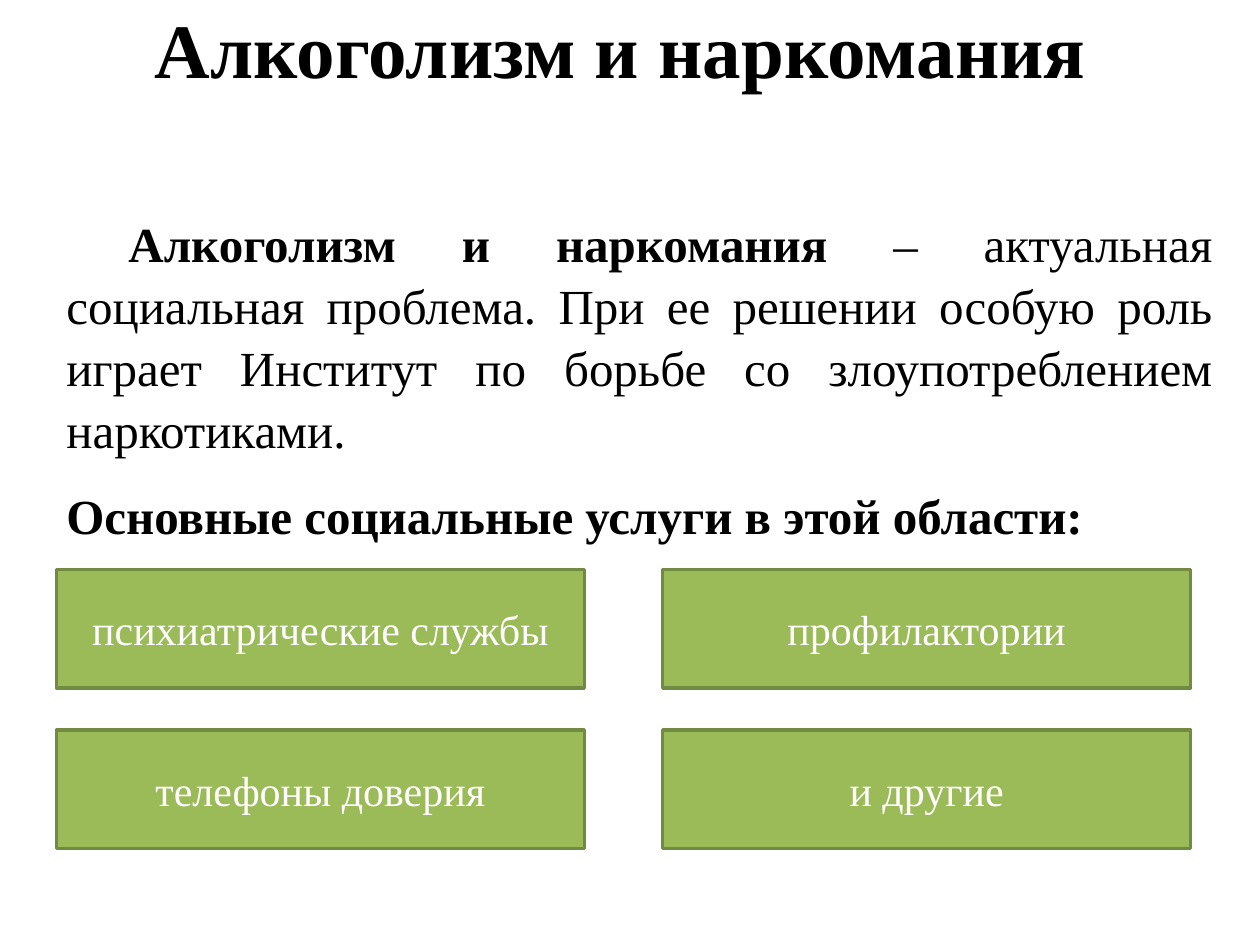
from dataclasses import dataclass

from pptx import Presentation
from pptx import util as u
from pptx.dml.color import RGBColor
from pptx.enum import shapes, text


@dataclass(frozen=True)
class Theme:
    font: str = "Times New Roman"
    ink: RGBColor = RGBColor(0x00, 0x00, 0x00)
    card_text: RGBColor = RGBColor(0xFF, 0xFF, 0xFF)
    card_fill: RGBColor = RGBColor(0x9B, 0xBB, 0x59)
    card_line: RGBColor = RGBColor(0x73, 0x8A, 0x42)
    title_size: int = 44
    body_size: int = 28
    card_size: int = 24
    card_line_width: int = 2
    body_spacing: float = 1.05


THEME = Theme()
SERVICES = [
    ["психиатрические службы", "профилактории"],
    ["телефоны доверия", "и другие"],
]


def style_run(run, size, color, bold=False):
    run.font.name = THEME.font
    run.font.size = u.Pt(size)
    run.font.color.rgb = color
    run.font.bold = bold


def place_title(slide, left, top, width, height):
    title = slide.shapes.title
    title.left, title.top = u.Cm(left), u.Cm(top)
    title.width, title.height = u.Cm(width), u.Cm(height)
    frame = title.text_frame
    frame.text = "Алкоголизм и наркомания "
    frame.auto_size = text.MSO_AUTO_SIZE.NONE
    frame.vertical_anchor = text.MSO_ANCHOR.MIDDLE
    heading = frame.paragraphs[0]
    heading.alignment = text.PP_ALIGN.CENTER
    style_run(heading.runs[0], THEME.title_size, THEME.ink, bold=True)


def add_statement(slide, left, top, width, height, parts):
    """Add a one-paragraph text box; parts holds (wording, bold) pairs."""
    statement = slide.shapes.add_textbox(
        u.Cm(left), u.Cm(top), u.Cm(width), u.Cm(height))
    frame = statement.text_frame
    frame.word_wrap = True
    frame.auto_size = text.MSO_AUTO_SIZE.SHAPE_TO_FIT_TEXT
    paragraph = frame.paragraphs[0]
    paragraph.line_spacing = THEME.body_spacing
    for wording, bold in parts:
        run = paragraph.add_run()
        run.text = wording
        style_run(run, THEME.body_size, THEME.ink, bold)
    return paragraph


def add_introduction(slide, left, top, width, height):
    # Definition, justified with an indented first line
    definition = add_statement(slide, left, top, width, 5.05, [
        ("Алкоголизм и наркомания", True),
        (" – актуальная социальная проблема. При ее решении особую роль "
         "играет Институт по борьбе со злоупотреблением наркотиками.", False),
    ])
    definition.alignment = text.PP_ALIGN.JUSTIFY
    definition._p.get_or_add_pPr().set("indent", str(u.Cm(1.25)))

    # Lead-in to the services, at the foot of the region
    lead_height = 1.45
    add_statement(slide, left, top + height - lead_height, width, lead_height,
                  [("Основные социальные услуги в этой области:", True)])


def add_service(slide, left, top, width, height, name):
    card = slide.shapes.add_shape(
        shapes.MSO_SHAPE.RECTANGLE,
        u.Cm(left), u.Cm(top), u.Cm(width), u.Cm(height))
    card.shadow.inherit = False
    card.fill.solid()
    card.fill.fore_color.rgb = THEME.card_fill
    card.line.color.rgb = THEME.card_line
    card.line.width = u.Pt(THEME.card_line_width)
    frame = card.text_frame
    frame.text = name
    frame.vertical_anchor = text.MSO_ANCHOR.MIDDLE
    label = frame.paragraphs[0]
    label.alignment = text.PP_ALIGN.CENTER
    style_run(label.runs[0], THEME.card_size, THEME.card_text)


def add_services(slide, left, top, width, height):
    card_width, card_height = 10.64, 2.39
    column_step = width - card_width
    row_step = height - card_height
    for row, names in enumerate(SERVICES):
        for column, name in enumerate(names):
            add_service(slide, left + column * column_step,
                        top + row * row_step, card_width, card_height, name)


def main():
    presentation = Presentation()
    presentation.slide_width = u.Cm(25.4)
    presentation.slide_height = u.Cm(19.05)
    slide = presentation.slides.add_slide(presentation.slide_layouts[5])
    place_title(slide, 0, 0, 25.4, 1.93)
    add_introduction(slide, 1.09, 4.13, 23.6, 6.93)
    add_services(slide, 1.14, 11.48, 22.86, 5.63)
    presentation.save("out.pptx")


if __name__ == "__main__":
    main()
